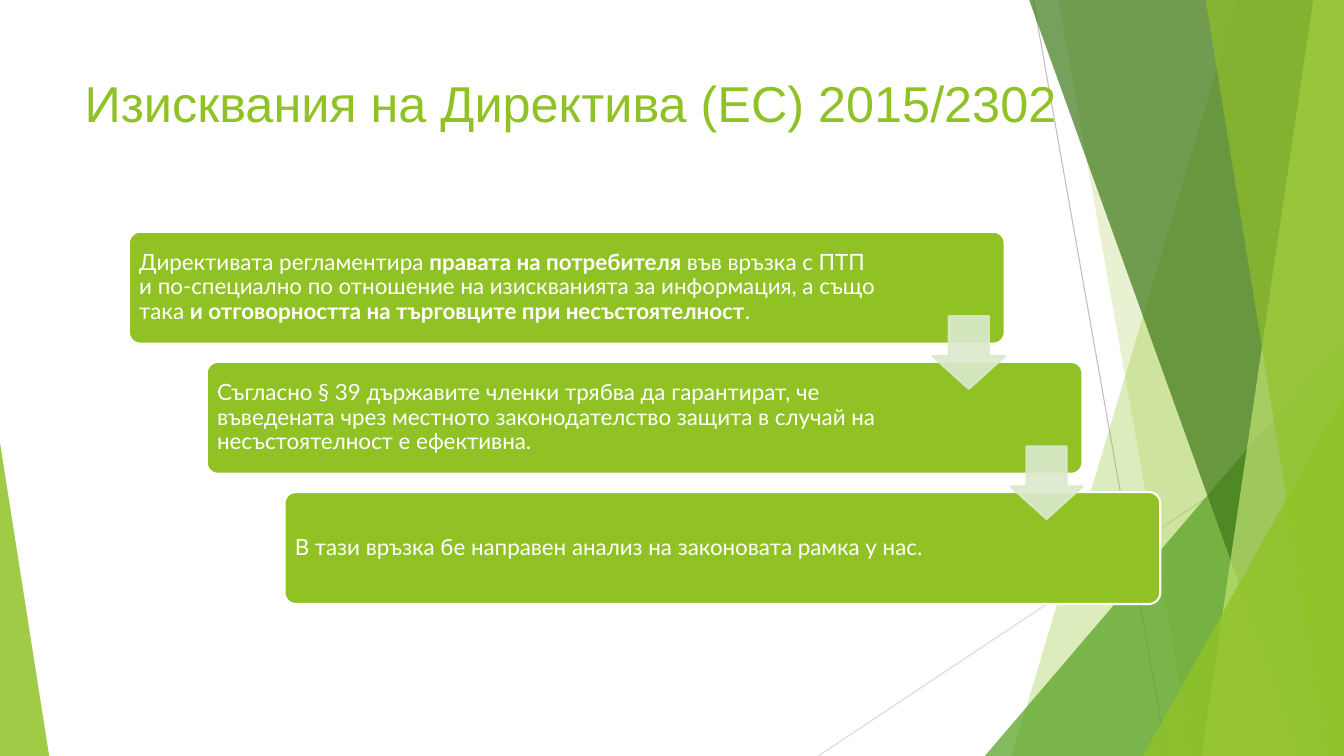
from dataclasses import dataclass

from lxml import etree
from pptx import Presentation
from pptx.dml.color import RGBColor
from pptx.enum.shapes import MSO_CONNECTOR, MSO_SHAPE
from pptx.enum.text import MSO_ANCHOR, MSO_AUTO_SIZE, PP_ALIGN
from pptx.oxml.ns import qn
from pptx.util import Cm, Pt

LINE = MSO_CONNECTOR.STRAIGHT
WEDGE = MSO_SHAPE.ISOSCELES_TRIANGLE
ROUND = MSO_SHAPE.ROUNDED_RECTANGLE
DOWN = MSO_SHAPE.DOWN_ARROW
TOP, MIDDLE = MSO_ANCHOR.TOP, MSO_ANCHOR.MIDDLE
NO_FIT = MSO_AUTO_SIZE.NONE
LEFT = PP_ALIGN.LEFT

WHITE = RGBColor(0xFF, 0xFF, 0xFF)
LIME = RGBColor(0x90, 0xC2, 0x26)
GREEN = RGBColor(0x54, 0xA0, 0x21)
DARK = RGBColor(0x3F, 0x78, 0x19)
PALE = RGBColor(0xC0, 0xE4, 0x74)
MINT = RGBColor(0xDB, 0xE9, 0xCD)
GREY = RGBColor(0xBF, 0xBF, 0xBF)
SILVER = RGBColor(0xD9, 0xD9, 0xD9)

WIDE, HIGH = 33.87, 19.05
TITLE = "Изисквания на Директива (ЕС) 2015/2302"


@dataclass
class Ray:
    ends: tuple[float, float, float, float]
    color: RGBColor


@dataclass
class Band:
    """Four-sided band from its left edge to the right side of the slide."""
    top: float
    base: float
    color: RGBColor
    alpha: int


@dataclass
class Peak:
    """Triangle standing on the bottom of the slide."""
    left: float
    top: float
    width: float
    apex: float
    color: RGBColor
    alpha: int


@dataclass
class Card:
    width: float
    runs: tuple[str, ...]  # plain and bold in turn


RAYS = [
    Ray((26.04, 0, 29.41, HIGH), GREY),
    Ray((WIDE, 10.24, 20.62, HIGH), SILVER),
]
DECOR = [
    Band(31.19, 25.5, LIME, 30),
    Band(26.67, 30.05, LIME, 20),
    Peak(24.82, 8.46, 9.05, 1, GREEN, 72),
    Band(25.93, 32.79, DARK, 70),
    Band(33.1, 30.28, PALE, 70),
    Band(30.38, 33.48, LIME, 65),
    Peak(28.8, 9.98, 5.07, 1, LIME, 80),
    Peak(0, 11.15, 1.24, 0, LIME, 85),
]
CARDS = [
    Card(19.02, (
        "Директивата регламентира ",
        "правата на потребителя ",
        "във връзка с ПТП и по-специално по отношение на изискванията "
        "за информация, а също така ",
        "и отговорността на търговците при несъстоятелност",
        ".",
    )),
    Card(18.14, (
        "Съгласно § 39 държавите членки трябва да гарантират, че въведената "
        "чрез местното законодателство защита в случай на несъстоятелност "
        "е ефективна.",
    )),
    Card(18.14, ("В тази връзка бе направен анализ на законовата рамка у нас.",)),
]

CARD_X, CARD_Y, CARD_W, CARD_H = 3.25, 5.84, 22.07, 2.82
STEP_X, STEP_Y = 1.96, 3.28
PAD = 0.09
ARROW_X, ARROW_Y, ARROW_D = 23.5, 7.97, 1.83


def assign(item, values: dict) -> None:
    for name, value in values.items():
        setattr(item, name, value)


def paint(shape, color: RGBColor, alpha: int = 100, edge: RGBColor | None = None) -> None:
    shape.shadow.inherit = False
    shape.fill.solid()
    shape.fill.fore_color.rgb = color
    if edge is None:
        shape.line.fill.background()
    else:
        shape.line.color.rgb = edge
        shape.line.width = Pt(1.5)
    if alpha < 100:
        for tint in shape._element.spPr.iter(qn("a:srgbClr")):
            etree.SubElement(tint, qn("a:alpha")).set("val", str(alpha * 1000))


def draw_ray(slide, ray: Ray) -> None:
    line = slide.shapes.add_connector(LINE, *map(Cm, ray.ends))
    line.line.color.rgb = ray.color
    line.line.width = Pt(0.75)
    etree.SubElement(line._element.spPr, qn("a:effectLst"))


def draw_band(slide, band: Band) -> None:
    path = slide.shapes.build_freeform(Cm(band.top), Cm(-0.02))
    ends = [(WIDE, -0.02), (WIDE, HIGH), (band.base, HIGH)]
    path.add_line_segments([(Cm(x), Cm(y)) for x, y in ends], close=True)
    paint(path.convert_to_shape(), band.color, band.alpha)


def draw_peak(slide, peak: Peak) -> None:
    box = peak.left, peak.top, peak.width, HIGH - peak.top
    shape = slide.shapes.add_shape(WEDGE, *map(Cm, box))
    shape.adjustments[0] = peak.apex
    paint(shape, peak.color, peak.alpha)


def draw_card(slide, card: Card, index: int) -> None:
    x, y = CARD_X + index * STEP_X, CARD_Y + index * STEP_Y
    plate = slide.shapes.add_shape(ROUND, Cm(x), Cm(y), Cm(CARD_W), Cm(CARD_H))
    plate.adjustments[0] = 0.1
    paint(plate, LIME, edge=WHITE)

    box = x + PAD, y + PAD, card.width, CARD_H - 2 * PAD
    frame = slide.shapes.add_textbox(*map(Cm, box)).text_frame
    sides = ("left", "top", "right", "bottom")
    assign(frame, {f"margin_{side}": Cm(0.17) for side in sides})
    assign(frame, {"word_wrap": True, "vertical_anchor": MIDDLE})
    para = frame.paragraphs[0]
    assign(para, {"line_spacing": 0.9, "space_after": Pt(5.6), "alignment": LEFT})
    for turn, text in enumerate(card.runs):
        run = para.add_run()
        run.text = text
        assign(run.font, {"name": "Lato", "size": Pt(16), "bold": turn % 2 == 1})
        run.font.color.rgb = WHITE


def draw_arrow(slide, index: int) -> None:
    box = ARROW_X + index * STEP_X, ARROW_Y + index * STEP_Y, ARROW_D, ARROW_D
    arrow = slide.shapes.add_shape(DOWN, *map(Cm, box))
    # Shaft width, then head length
    arrow.adjustments[0] = 0.55
    arrow.adjustments[1] = 0.45
    paint(arrow, MINT, 90, MINT)


def set_title(slide) -> None:
    title = slide.shapes.title
    assign(title, {"left": Cm(1.88), "top": Cm(1.7),
                   "width": Cm(25.68), "height": Cm(3.66)})
    frame = title.text_frame
    frame.text = TITLE
    assign(frame, {"word_wrap": True, "vertical_anchor": TOP, "auto_size": NO_FIT})
    para = frame.paragraphs[0]
    para.alignment = LEFT
    font = para.runs[0].font
    assign(font, {"name": "Arial", "size": Pt(36)})
    font.color.rgb = LIME
    # Bring the title in front of the decor
    title._element.getparent().append(title._element)


def main() -> None:
    deck = Presentation()
    deck.slide_width, deck.slide_height = Cm(WIDE), Cm(HIGH)
    slide = deck.slides.add_slide(deck.slide_layouts[5])

    # Background decor
    for ray in RAYS:
        draw_ray(slide, ray)
    for part in DECOR:
        if isinstance(part, Band):
            draw_band(slide, part)
        else:
            draw_peak(slide, part)

    # Title, stepped cards and the arrows between them
    set_title(slide)
    for index, card in enumerate(CARDS):
        draw_card(slide, card, index)
    for index in range(len(CARDS) - 1):
        draw_arrow(slide, index)

    deck.save("out.pptx")


if __name__ == "__main__":
    main()
